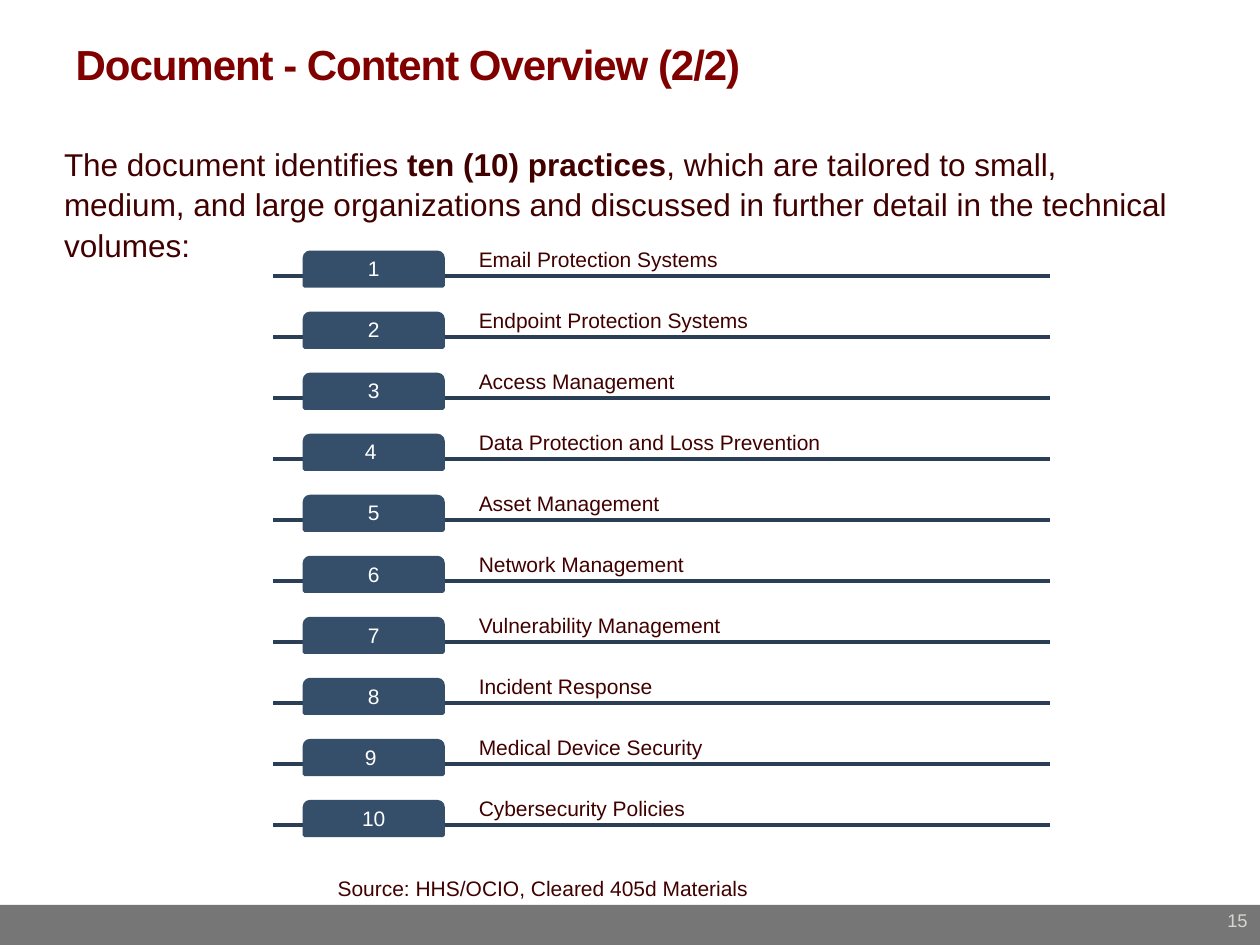
from pptx import Presentation
from pptx.dml.color import RGBColor
from pptx.enum.shapes import MSO_CONNECTOR, MSO_SHAPE
from pptx.enum.text import MSO_ANCHOR as Anchor, MSO_AUTO_SIZE as AutoSize, PP_ALIGN as Align
from pptx.oxml.ns import qn
from pptx.util import Pt
from lxml.etree import SubElement

PRACTICES = [
    ("1", "Email Protection Systems"),
    ("2", "Endpoint Protection Systems"),
    ("3", "Access Management"),
    ("4 ", "Data Protection and Loss Prevention"),
    ("5", "Asset Management"),
    ("6", "Network Management"),
    ("7", "Vulnerability Management"),
    ("8", "Incident Response"),
    ("9 ", "Medical Device Security"),
    ("10", "Cybersecurity Policies"),
]
FIRST_RULE, ROW_PITCH = 157.6, 34.88
SMALL_INSETS = (2.4, 2.4, 2.4, 2.4)
BOX_INSETS = (7.2, 3.6, 7.2, 3.6)


def color(hex_value):
    return RGBColor.from_string(hex_value)


class SlideBuilder:
    """Holds the style and the current slide; lengths are in points."""

    font = "Arial"
    heading = "800000"
    ink = "400000"
    rule = "2A3F56"
    tab_fill = "354F6B"
    footer = "767676"
    footer_ink = "D6D6D0"
    white = "FFFFFF"

    def __init__(self, slide):
        self.slide = slide

    def fill_text(self, shape, runs, size, ink, align=Align.LEFT, anchor=Anchor.TOP,
                  insets=BOX_INSETS, spacing=1.0):
        """Fill a shape with one paragraph of (text, bold) runs."""
        frame = shape.text_frame
        frame.word_wrap = True
        frame.auto_size = AutoSize.NONE
        frame.vertical_anchor = anchor
        (frame.margin_left, frame.margin_top,
         frame.margin_right, frame.margin_bottom) = map(Pt, insets)
        paragraph = frame.paragraphs[0]
        paragraph.alignment = align
        paragraph.line_spacing = spacing
        for text, bold in runs:
            run = paragraph.add_run()
            run.text = text
            run.font.name = self.font
            run.font.size = Pt(size)
            run.font.bold = bold
            run.font.color.rgb = color(ink)
        return paragraph

    def title(self, text, left, top, width, height):
        title = self.slide.shapes.title
        title.left, title.top, title.width, title.height = map(Pt, (left, top, width, height))
        paragraph = self.fill_text(title, [(text, True)], 24, self.heading, spacing=0.9)
        paragraph.runs[0].font._element.set("spc", "-60")

    def text(self, runs, left, top, width, height, size=12, ink=None, **layout):
        box = self.slide.shapes.add_textbox(Pt(left), Pt(top), Pt(width), Pt(height))
        self.fill_text(box, runs, size, ink or self.ink, **layout)

    def block(self, kind, fill, left, top, width, height):
        shape = self.slide.shapes.add_shape(kind, Pt(left), Pt(top), Pt(width), Pt(height))
        shape.shadow.inherit = False
        shape.fill.solid()
        shape.fill.fore_color.rgb = color(fill)
        shape.line.fill.background()
        return shape

    def tab(self, number, left, top, width, height):
        shape = self.block(MSO_SHAPE.ROUND_2_SAME_RECTANGLE, self.tab_fill,
                           left, top, width, height)
        shape.line.color.rgb = color(self.tab_fill)
        shape.line.width = Pt(2)
        self.fill_text(shape, [(number, False)], 12, self.white, align=Align.CENTER,
                       anchor=Anchor.MIDDLE, insets=SMALL_INSETS, spacing=0.9)

    def horizontal_rule(self, left, right, y):
        line = self.slide.shapes.add_connector(
            MSO_CONNECTOR.STRAIGHT, Pt(left), Pt(y), Pt(right), Pt(y))
        line.line.color.rgb = color(self.rule)
        line.line.width = Pt(2)
        SubElement(line._element.spPr, qn("a:effectLst"))

    def practice(self, number, name, y):
        """Draw one numbered row standing on the rule at y."""
        self.horizontal_rule(156.2, 599.8, y)
        self.text([(name, False)], 271.2, y - 8, 328.6, 8,
                  anchor=Anchor.BOTTOM, insets=SMALL_INSETS, spacing=0.9)
        self.tab(number, 174, y - 13.4, 79.2, 19.2)


def main():
    presentation = Presentation()
    presentation.slide_width, presentation.slide_height = Pt(720), Pt(540)
    slide = presentation.slides.add_slide(presentation.slide_layouts[5])
    builder = SlideBuilder(slide)

    builder.block(MSO_SHAPE.RECTANGLE, builder.footer, 0, 517, 720, 23)
    builder.title("Document - Content Overview (2/2)", 36, 21.6, 648, 90)
    builder.text([("15", False)], 648.7, 516.2, 71.3, 23.8, size=10.5,
                 ink=builder.footer_ink, align=Align.RIGHT, insets=(0, 3.6, 7.2, 3.6))
    builder.text([
        ("The document identifies ", False),
        ("ten (10) practices", True),
        (", which are tailored to small, medium, and large organizations and "
         "discussed in further detail in the technical volumes:", False),
    ], 29.5, 77.8, 653.8, 77, size=18, spacing=1.07)
    for row, (number, name) in enumerate(PRACTICES):
        builder.practice(number, name, FIRST_RULE + row * ROW_PITCH)
    builder.text([("Source: HHS/OCIO, Cleared 405d Materials", False)],
                 185.8, 496.8, 495.4, 21.8)

    presentation.save("out.pptx")


if __name__ == "__main__":
    main()
